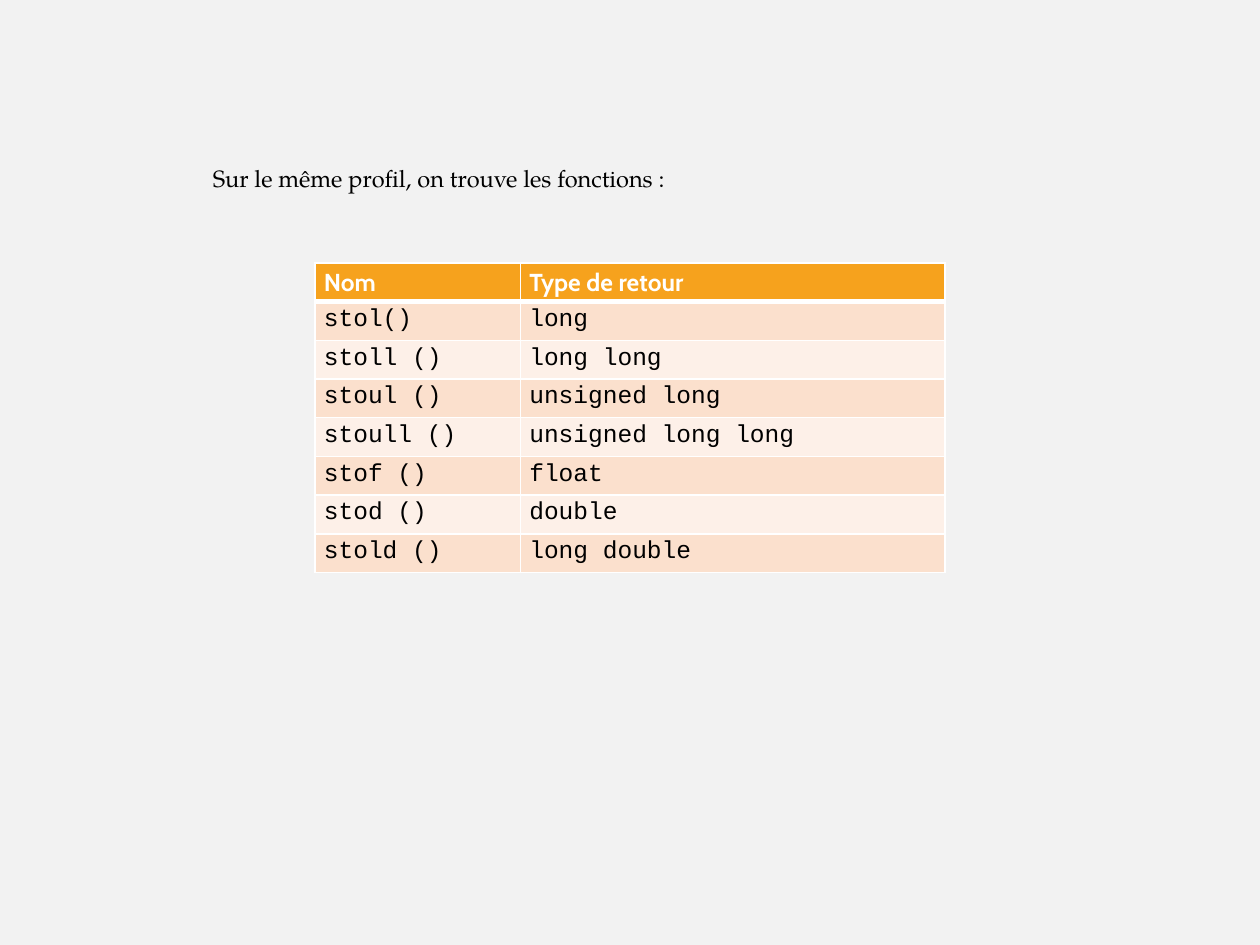
import pptx
import pptx.dml.color
import pptx.oxml
import pptx.oxml.ns
import pptx.util

Cm = pptx.util.Cm
Pt = pptx.util.Pt
RGBColor = pptx.dml.color.RGBColor

INTRO = "Sur le même profil, on trouve les fonctions :"
HEADER = ("Nom", "Type de retour")
FUNCTIONS = [
    ("stol()", "long"),
    ("stoll ()", "long long"),
    ("stoul ()", "unsigned long"),
    ("stoull ()", "unsigned long long"),
    ("stof ()", "float"),
    ("stod ()", "double"),
    ("stold ()", "long double"),
]

BACKGROUND = RGBColor(0xF2, 0xF2, 0xF2)
BLACK = RGBColor(0, 0, 0)
WHITE = RGBColor(0xFF, 0xFF, 0xFF)
ORANGE = RGBColor(0xF6, 0xA2, 0x1D)
BANDS = (RGBColor(0xFB, 0xE0, 0xCD), RGBColor(0xFD, 0xF0, 0xE8))

COLUMN_WIDTHS = (Cm(4.14), Cm(8.56))
ROW_HEIGHT = Cm(0.78)


def format_text(tf, font, size, color, bold=False):
    for p in tf.paragraphs:
        for r in p.runs:
            r.font.name = font
            r.font.size = Pt(size)
            r.font.color.rgb = color
            r.font.bold = bold


def set_borders(cell, bottom):
    tc_pr = cell._tc.get_or_add_tcPr()
    widths = {"lnL": 1, "lnR": 1, "lnT": 1, "lnB": bottom}
    for i, (side, width) in enumerate(widths.items()):
        ln = pptx.oxml.parse_xml(
            f'<a:{side} {pptx.oxml.ns.nsdecls("a")} w="{Pt(width)}">'
            f'<a:solidFill><a:srgbClr val="{WHITE}"/></a:solidFill></a:{side}>'
        )
        tc_pr.insert(i, ln)


def add_intro(slide):
    sp = slide.shapes.add_textbox(Cm(4.04), Cm(3.18), Cm(13.92), Cm(0.84))
    tf = sp.text_frame
    tf.word_wrap = True
    tf.text = INTRO
    format_text(tf, "TeX Gyre Pagella", 13.5, BLACK)


def add_function_table(slide):
    rows = [HEADER] + FUNCTIONS
    table = slide.shapes.add_table(
        len(rows), len(HEADER), Cm(6.35), Cm(5.3),
        sum(COLUMN_WIDTHS), ROW_HEIGHT * len(rows),
    ).table
    for column, width in zip(table.columns, COLUMN_WIDTHS):
        column.width = width
    for i, values in enumerate(rows):
        table.rows[i].height = ROW_HEIGHT
        for j, value in enumerate(values):
            cell = table.cell(i, j)
            cell.margin_left = cell.margin_right = Cm(0.18)
            cell.margin_top = cell.margin_bottom = Cm(0.09)
            cell.text_frame.text = value
            cell.fill.solid()
            if i == 0:
                cell.fill.fore_color.rgb = ORANGE
                format_text(cell.text_frame, "Cabin", 14, WHITE, bold=True)
            else:
                cell.fill.fore_color.rgb = BANDS[(i - 1) % 2]
                format_text(cell.text_frame, "Courier New", 14, BLACK)
            set_borders(cell, bottom=3 if i == 0 else 1)


def main():
    prs = pptx.Presentation()
    prs.slide_width, prs.slide_height = Cm(25.4), Cm(19.05)
    slide = prs.slides.add_slide(prs.slide_layouts[6])
    slide.background.fill.solid()
    slide.background.fill.fore_color.rgb = BACKGROUND
    add_intro(slide)
    add_function_table(slide)
    prs.save("out.pptx")


if __name__ == "__main__":
    main()
